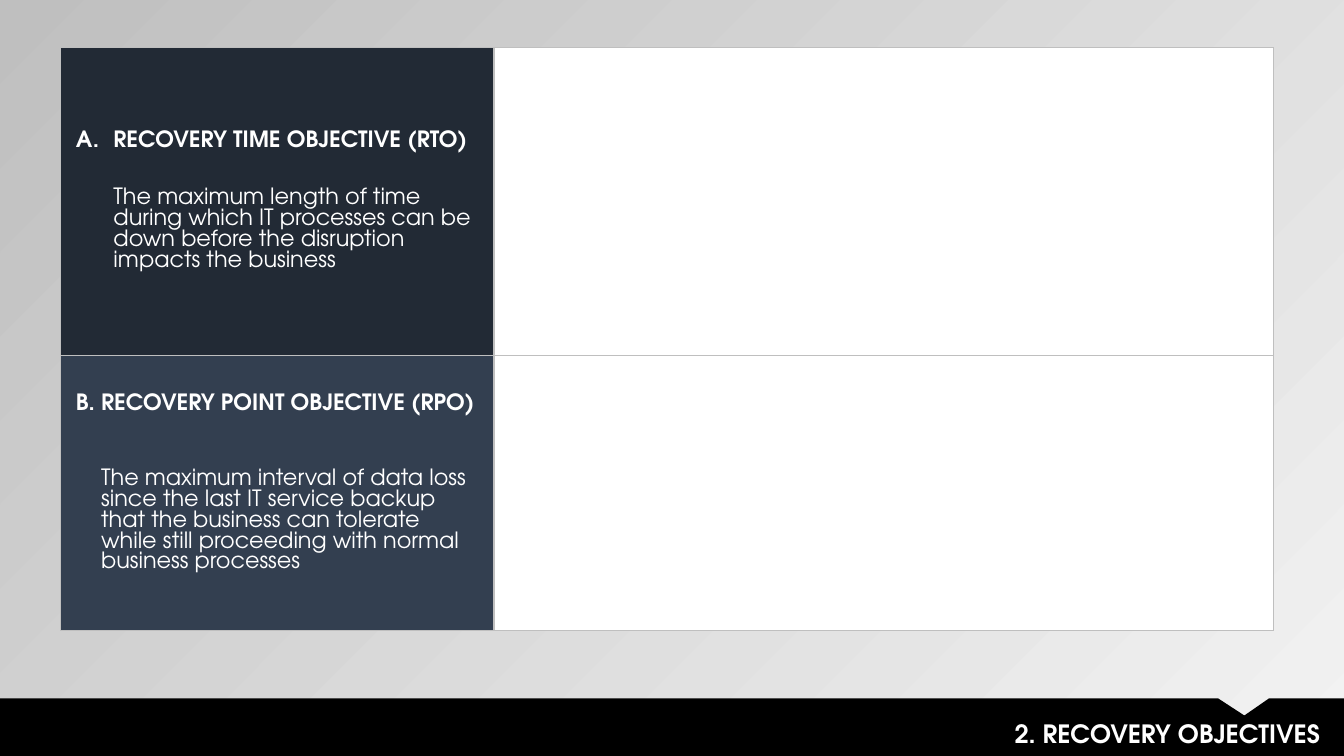
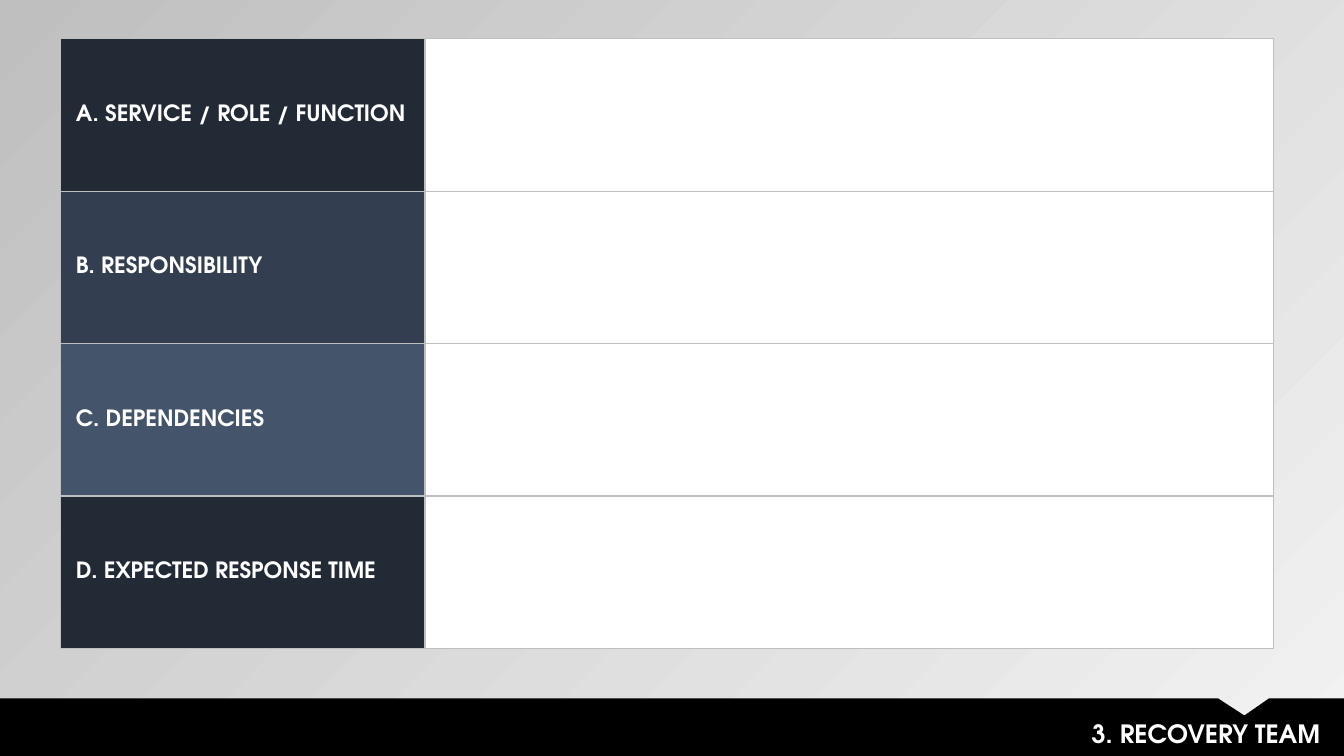
from lxml.etree import SubElement
from pptx import Presentation
from pptx.dml.color import RGBColor
from pptx.enum.text import MSO_ANCHOR, MSO_AUTO_SIZE, PP_ALIGN
from pptx.oxml.ns import qn
from pptx.util import Cm, Pt

FONT = "TeX Gyre Adventor"
COLORS = {
    "navy": "222A35", "slate": "333F50", "steel": "44546A",
    "white": "FFFFFF", "black": "000000", "border": "BFBFBF",
    "bg_light": "F2F2F2", "bg_dark": "BFBFBF",
}

# Content: each row has a height and fill (lengths in cm); optional keys
# are heading, body, number, left, anchor, open sides and merge with next row
SLIDES = [
    {
        "title": "2. RECOVERY OBJECTIVES",
        "top": 1.2,
        "label_width": 10.92,
        "rows": [
            {"height": 7.75, "fill": "navy", "number": True,
             "heading": "RECOVERY TIME OBJECTIVE (RTO)",
             "body": "The maximum length of time during which IT processes "
                     "can be down before the disruption impacts the business"},
            {"height": 2.49, "fill": "slate", "open": "B", "merge": True,
             "heading": "B. RECOVERY POINT OBJECTIVE (RPO)"},
            {"height": 4.45, "fill": "slate", "open": "T", "left": 1.02,
             "anchor": MSO_ANCHOR.TOP,
             "body": "The maximum interval of data loss since the last IT "
                     "service backup that the business can tolerate while "
                     "still proceeding with normal business processes"},
        ],
    },
    {
        "title": "3. RECOVERY TEAM",
        "top": 0.98,
        "label_width": 9.18,
        "rows": [
            {"height": 3.84, "fill": fill, "heading": heading}
            for fill, heading in [
                ("navy", "A. SERVICE / ROLE / FUNCTION"),
                ("slate", "B. RESPONSIBILITY"),
                ("steel", "C. DEPENDENCIES"),
                ("navy", "D. EXPECTED RESPONSE TIME"),
            ]
        ],
    },
]

# Shared geometry in cm
SLIDE_W, SLIDE_H = 33.87, 19.05
TABLE_LEFT, TABLE_W = 1.53, 30.57
INSET, HANGING = 0.38, 0.95
BAND_TOP = 17.6
NOTCH = [(30.7, BAND_TOP), (31.36, 18.03), (31.98, BAND_TOP)]
TITLE_BOX = (10.5, 17.98, 23.02, 1.02)


def rgb(name):
    return RGBColor.from_string(COLORS[name])


def write(tf, text, size=16, bold=False, color="white",
          align=PP_ALIGN.LEFT, before=0):
    """Fill the first paragraph, or add one when it already has text."""
    p = tf.add_paragraph() if tf.text else tf.paragraphs[0]
    p.alignment = align
    p.space_before = Pt(before)
    r = p.add_run()
    r.text = text
    r.font.name = FONT
    r.font.size = Pt(size)
    r.font.bold = bold
    r.font.color.rgb = rgb(color)
    return p


def set_borders(cell, open_sides=""):
    tc_pr = cell._tc.get_or_add_tcPr()
    for i, side in enumerate("LRTB"):
        ln = SubElement(tc_pr, qn(f"a:ln{side}"), w=str(Pt(1)))
        if side in open_sides:
            SubElement(ln, qn("a:noFill"))
        else:
            fill = SubElement(ln, qn("a:solidFill"))
            SubElement(fill, qn("a:srgbClr"), val=COLORS["border"])
        tc_pr.insert(i, ln)


def fill_cell(cell, color, open_sides=""):
    cell.fill.solid()
    cell.fill.fore_color.rgb = rgb(color)
    set_borders(cell, open_sides)


def set_indent(p, hanging, numbered=False):
    p_pr = p._p.get_or_add_pPr()
    p_pr.set("marL", str(Cm(hanging)))
    p_pr.set("indent", str(-Cm(hanging) if numbered else 0))
    if numbered:
        SubElement(p_pr, qn("a:buFont"), typeface="+mj-lt")
        SubElement(p_pr, qn("a:buAutoNum"), type="alphaUcPeriod")


def write_label(cell, row):
    cell.vertical_anchor = row.get("anchor", MSO_ANCHOR.MIDDLE)
    cell.margin_left = Cm(row.get("left", INSET))
    cell.margin_top = cell.margin_right = cell.margin_bottom = Cm(INSET)
    tf = cell.text_frame
    numbered = row.get("number", False)
    if "heading" in row:
        p = write(tf, row["heading"], bold=True)
        if numbered:
            set_indent(p, HANGING, numbered=True)
    if "body" in row:
        p = write(tf, row["body"], before=26 if "heading" in row else 0)
        if numbered:
            set_indent(p, HANGING)


def add_form(s, top, label_width, rows):
    height = sum(row["height"] for row in rows)
    table = s.shapes.add_table(len(rows), 2, Cm(TABLE_LEFT), Cm(top),
                               Cm(TABLE_W), Cm(height)).table
    table.first_row = table.horz_banding = False
    table.columns[0].width = Cm(label_width)
    table.columns[1].width = Cm(TABLE_W - label_width)
    for i, row in enumerate(rows):
        table.rows[i].height = Cm(row["height"])
        fill_cell(table.cell(i, 0), row["fill"], row.get("open", ""))
        fill_cell(table.cell(i, 1), "white")
        write_label(table.cell(i, 0), row)
        if row.get("merge"):
            table.cell(i, 1).merge(table.cell(i + 1, 1))


def set_background(s):
    fill = s.background.fill
    fill.gradient()
    fill.gradient_angle = 135
    for stop, position, color in zip(fill.gradient_stops, (0, 1),
                                     ("bg_light", "bg_dark")):
        stop.position = position
        stop.color.rgb = rgb(color)
    light = next(s.element.iter(qn("a:srgbClr")))
    SubElement(light, qn("a:alpha"), val="40000")


def add_band(s):
    points = NOTCH + [(SLIDE_W, BAND_TOP), (SLIDE_W, SLIDE_H), (0, SLIDE_H)]
    builder = s.shapes.build_freeform(Cm(0), Cm(BAND_TOP))
    builder.add_line_segments([(Cm(x), Cm(y)) for x, y in points], close=True)
    band = builder.convert_to_shape()
    band.shadow.inherit = False
    band.fill.solid()
    band.fill.fore_color.rgb = rgb("black")
    band.line.fill.background()
    return band


def place_title(s, text, band):
    title = s.shapes.title
    title.left, title.top, title.width, title.height = map(Cm, TITLE_BOX)
    tf = title.text_frame
    tf.word_wrap = True
    tf.auto_size = MSO_AUTO_SIZE.SHAPE_TO_FIT_TEXT
    tf.vertical_anchor = MSO_ANCHOR.TOP
    write(tf, text, size=18, bold=True, align=PP_ALIGN.RIGHT)
    # Bring the title in front of the band
    band.element.addnext(title.element)


def main():
    prs = Presentation()
    prs.slide_width, prs.slide_height = Cm(SLIDE_W), Cm(SLIDE_H)
    for content in SLIDES:
        s = prs.slides.add_slide(prs.slide_layouts[5])
        set_background(s)
        add_form(s, content["top"], content["label_width"], content["rows"])
        place_title(s, content["title"], add_band(s))
    prs.save("out.pptx")


if __name__ == "__main__":
    main()
